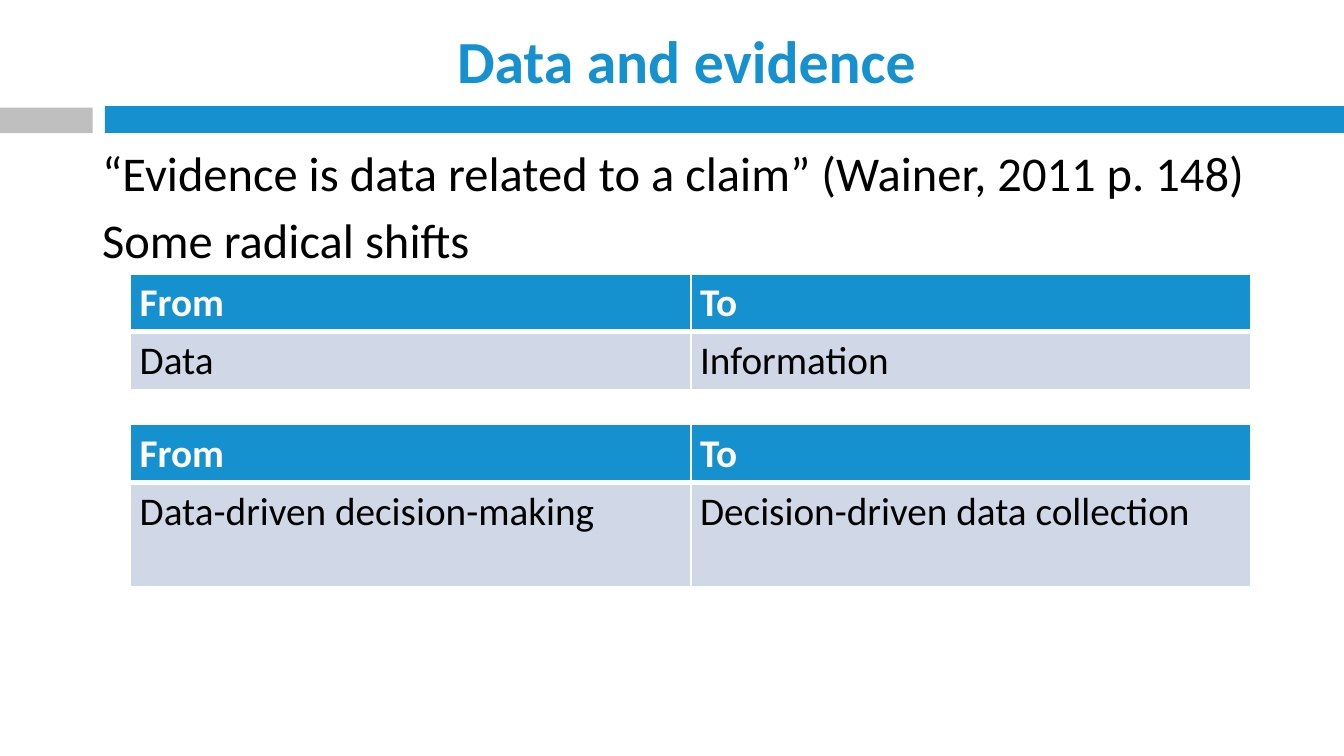
from dataclasses import dataclass

from lxml import etree
from pptx import Presentation
from pptx.dml.color import RGBColor
from pptx.enum.shapes import MSO_SHAPE
from pptx.enum.text import MSO_ANCHOR, PP_ALIGN
from pptx.oxml.ns import qn
from pptx.util import Inches, Pt

RECT = MSO_SHAPE.RECTANGLE
MIDDLE, TOP = MSO_ANCHOR.MIDDLE, MSO_ANCHOR.TOP
CENTER, LEFT = PP_ALIGN.CENTER, PP_ALIGN.LEFT


@dataclass(frozen=True)
class Theme:
    font: str = "Calibri"
    blue: str = "1691D0"
    grey: str = "BFBFBF"
    pale: str = "D0D8E8"
    white: str = "FFFFFF"
    black: str = "000000"
    title_size: int = 32
    body_size: int = 26
    table_size: int = 21


@dataclass(frozen=True)
class Bar:
    left: float
    top: float
    width: float
    height: float
    color: str


@dataclass(frozen=True)
class ShiftTable:
    top: float
    body_height: float
    before: str
    after: str


THEME = Theme()
PAD_X, PAD_Y = 0.07, 0.04
TABLE_LEFT, COLUMN_WIDTH, HEADER_HEIGHT = 0.97, 4.17, 0.42

BARS = [
    Bar(0.78, 0.79, 9.22, 0.2, THEME.blue),
    Bar(0, 0.8, 0.69, 0.19, THEME.grey),
]
STATEMENTS = [
    "“Evidence is data related to a claim” (Wainer, 2011 p. 148)",
    "Some radical shifts",
]
SHIFTS = [
    ShiftTable(2.04, 0.42, "Data", "Information"),
    ShiftTable(3.16, 0.78, "Data-driven decision-making",
               "Decision-driven data collection"),
]


def add_text(p, text: str, size: int, color: str, bold: bool = False) -> None:
    r = p.add_run()
    r.text = text
    r.font.name = THEME.font
    r.font.size = Pt(size)
    r.font.bold = bold
    r.font.color.rgb = RGBColor.from_string(color)


def set_margins(target) -> None:
    """Apply the common padding to a text frame or a table cell."""
    target.margin_left = target.margin_right = Inches(PAD_X)
    target.margin_top = target.margin_bottom = Inches(PAD_Y)


def add_bar(s, bar: Bar) -> None:
    sp = s.shapes.add_shape(RECT, Inches(bar.left), Inches(bar.top),
                            Inches(bar.width), Inches(bar.height))
    sp.shadow.inherit = False
    sp.fill.solid()
    sp.fill.fore_color.rgb = RGBColor.from_string(bar.color)
    sp.line.fill.background()


def set_title(s, text: str) -> None:
    sp = s.shapes.title
    sp.left, sp.top = Inches(0.78), Inches(0.19)
    sp.width, sp.height = Inches(8.66), Inches(0.51)
    tf = sp.text_frame
    tf.word_wrap = True
    tf.vertical_anchor = MIDDLE
    set_margins(tf)
    p = tf.paragraphs[0]
    p.alignment = CENTER
    add_text(p, text, THEME.title_size, THEME.blue, bold=True)


def add_body(s, lines: list[str]) -> None:
    sp = s.shapes.add_textbox(Inches(0.69), Inches(1.02),
                              Inches(8.9), Inches(4.32))
    tf = sp.text_frame
    tf.word_wrap = True
    tf.vertical_anchor = TOP
    set_margins(tf)
    for i, line in enumerate(lines):
        p = tf.add_paragraph() if i else tf.paragraphs[0]
        p.alignment = LEFT
        p.space_before = Pt(0.2 * THEME.body_size if i else 0)
        add_text(p, line, THEME.body_size, THEME.black)


def set_borders(cell, top: float, bottom: float) -> None:
    """Draw white cell borders; the sides are always 1 pt."""
    tc_pr = cell._tc.get_or_add_tcPr()
    widths = {"a:lnL": 1, "a:lnR": 1, "a:lnT": top, "a:lnB": bottom}
    for i, (tag, width) in enumerate(widths.items()):
        ln = etree.Element(qn(tag), w=str(Pt(width)))
        fill = etree.SubElement(ln, qn("a:solidFill"))
        etree.SubElement(fill, qn("a:srgbClr"), val=THEME.white)
        tc_pr.insert(i, ln)


def add_shift_table(s, shift: ShiftTable) -> None:
    heights = (HEADER_HEIGHT, shift.body_height)
    frame = s.shapes.add_table(2, 2, Inches(TABLE_LEFT), Inches(shift.top),
                               Inches(2 * COLUMN_WIDTH), Inches(sum(heights)))
    table = frame.table
    for column in table.columns:
        column.width = Inches(COLUMN_WIDTH)
    for row, height in zip(table.rows, heights):
        row.height = Inches(height)

    for i, texts in enumerate([("From", "To"), (shift.before, shift.after)]):
        header = i == 0
        for j, text in enumerate(texts):
            cell = table.cell(i, j)
            cell.fill.solid()
            cell.fill.fore_color.rgb = RGBColor.from_string(
                THEME.blue if header else THEME.pale)
            cell.vertical_anchor = TOP
            set_margins(cell)
            # A thick rule parts the header from the body row
            set_borders(cell, 1 if header else 3, 3 if header else 1)
            add_text(cell.text_frame.paragraphs[0], text, THEME.table_size,
                     THEME.white if header else THEME.black, bold=header)


def main() -> None:
    prs = Presentation()
    # Widescreen, 16:9
    prs.slide_width = Inches(10)
    prs.slide_height = Inches(10 * 9 / 16)
    s = prs.slides.add_slide(prs.slide_layouts[5])

    # Heading with its two-part rule
    for bar in BARS:
        add_bar(s, bar)
    set_title(s, "Data and evidence")

    # Statements and the shifts they introduce
    add_body(s, STATEMENTS)
    for shift in SHIFTS:
        add_shift_table(s, shift)

    prs.save("out.pptx")


if __name__ == "__main__":
    main()
